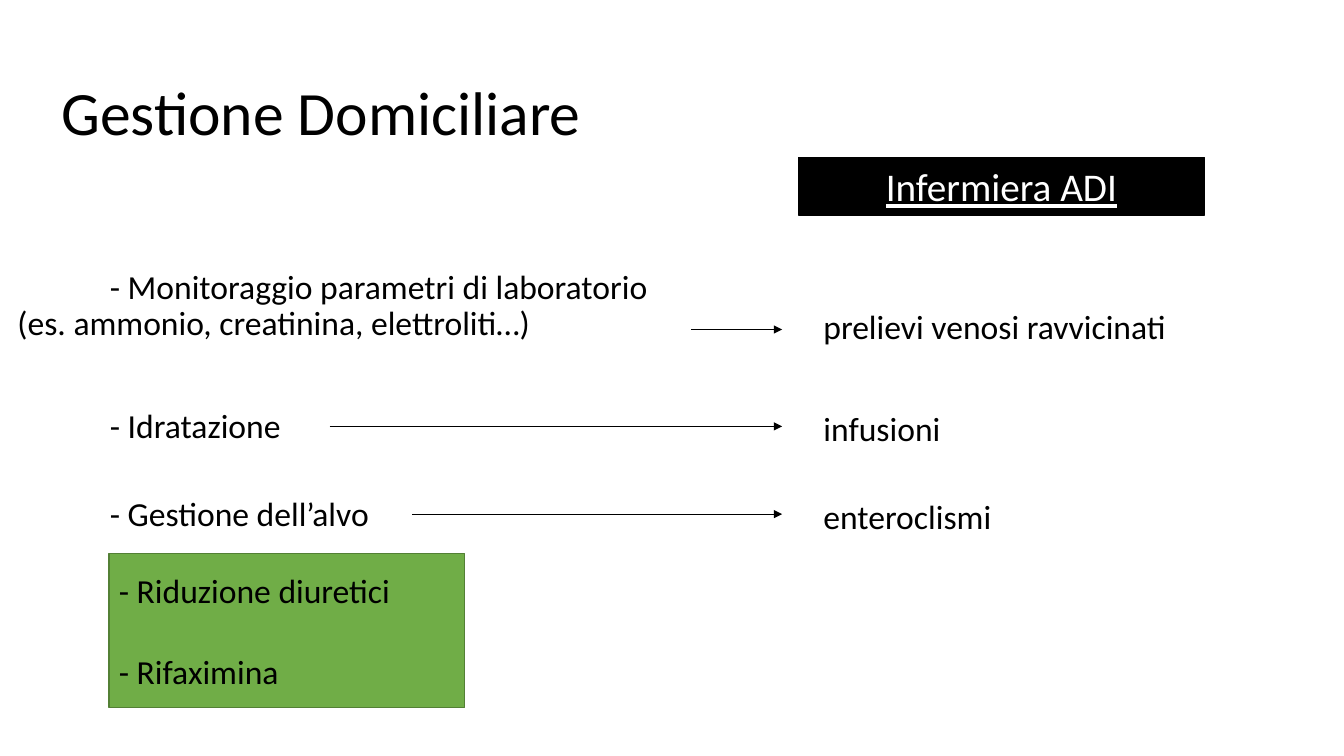
from collections import namedtuple
from dataclasses import dataclass

from lxml.etree import SubElement
from pptx import Presentation
from pptx.dml.color import RGBColor
from pptx.enum.shapes import MSO_CONNECTOR as Connector, MSO_SHAPE as Shape
from pptx.enum.text import MSO_ANCHOR as Anchor, PP_ALIGN as Align
from pptx.oxml.ns import qn
from pptx.util import Pt

Box = namedtuple("Box", "left top width height")
Row = namedtuple("Row", "need top arrow_start arrow_drop service service_drop", defaults=(2.4,))


@dataclass(frozen=True)
class Theme:
    font: str = "Calibri"
    ink: RGBColor = RGBColor.from_string("000000")
    paper: RGBColor = RGBColor.from_string("FFFFFF")
    green: RGBColor = RGBColor.from_string("70AD47")
    green_edge: RGBColor = RGBColor.from_string("538035")
    title: float = 44
    heading: float = 28
    body: float = 24


THEME = Theme()


def write(frame, text, *, size=THEME.body, color=THEME.ink, underline=False, align=Align.LEFT,
          anchor=Anchor.TOP, spacing=0.9, gap=0, inset=(7.2, 3.6), hanging=0, first=0):
    frame.word_wrap = True
    frame.vertical_anchor = anchor
    frame.margin_left = frame.margin_right = Pt(inset[0])
    frame.margin_top = frame.margin_bottom = Pt(inset[1])
    for index, line in enumerate(text.split("\n")):
        paragraph = frame.add_paragraph() if index else frame.paragraphs[0]
        paragraph.text = line
        paragraph.alignment = align
        paragraph.line_spacing = spacing
        paragraph.space_before = Pt(gap if index else 0)
        properties = paragraph._p.get_or_add_pPr()
        properties.set("marL", str(Pt(hanging)))
        properties.set("indent", str(Pt(first)))
        for run in paragraph.runs:
            run.font.name = THEME.font
            run.font.size = Pt(size)
            run.font.color.rgb = color
            run.font.underline = underline


def label(slide, box, text, **style):
    write(slide.shapes.add_textbox(*map(Pt, box)).text_frame, text, **style)


def panel(slide, box, text, fill, edge, **style):
    block = slide.shapes.add_shape(Shape.RECTANGLE, *map(Pt, box))
    block.shadow.inherit = False
    block.fill.solid()
    block.fill.fore_color.rgb = fill
    block.line.color.rgb = edge
    block.line.width = Pt(1)
    write(block.text_frame, text, anchor=Anchor.MIDDLE, spacing=1.0, **style)


def arrow(slide, start, end, y):
    link = slide.shapes.add_connector(Connector.STRAIGHT, Pt(start), Pt(y), Pt(end), Pt(y))
    link.line.color.rgb = THEME.ink
    link.line.width = Pt(0.5)
    SubElement(link.line._get_or_add_ln(), qn("a:tailEnd"), type="triangle")
    SubElement(link._element.spPr, qn("a:effectLst"))


def care_rows(slide, box, rows):
    line_height = 26.4
    service_left = box.left + 588.2
    for row in rows:
        top = box.top + row.top
        lines = row.need.count("\v") + 1
        last_line = top + (lines - 1) * line_height
        label(slide, Box(box.left, top, 482, lines * line_height), row.need,
              inset=(7.2, 0), hanging=5.4, first=66)
        label(slide, Box(service_left, last_line + row.service_drop,
                         box.width - service_left, line_height), row.service, inset=(0, 0))
        arrow(slide, box.left + row.arrow_start, service_left - 29.5, last_line + row.arrow_drop)


def home_care_slide(slide, box):
    label(slide, Box(box.left + 36.7, box.top + 30.2, 828, 104.4), "Gestione Domiciliare",
          size=THEME.title, anchor=Anchor.MIDDLE)
    panel(slide, Box(box.left + 570.2, box.top + 112.3, 290.2, 41.2), "Infermiera ADI",
          THEME.ink, THEME.ink, size=THEME.heading, color=THEME.paper,
          underline=True, align=Align.CENTER)
    care_rows(slide, Box(box.left, box.top + 193, box.width, 190), [
        Row("- Monitoraggio parametri di laboratorio\v(es. ammonio, creatinina, elettroliti…)",
            0, 493.9, 16, "prelievi venosi ravvicinati"),
        Row("- Idratazione", 99.2, 235.4, 12.4, "infusioni"),
        Row("- Gestione dell’alvo", 162, 294.5, 12.2, "enteroclismi"),
    ])
    panel(slide, Box(box.left + 77.8, box.top + 395.3, 254.2, 110.2),
          "- Riduzione diuretici\n- Rifaximina", THEME.green, THEME.green_edge, gap=29)


def main():
    deck = Presentation()
    deck.slide_width, deck.slide_height = Pt(960), Pt(540)
    home_care_slide(deck.slides.add_slide(deck.slide_layouts[6]), Box(0, 0, 960, 540))
    deck.save("out.pptx")


if __name__ == "__main__":
    main()
